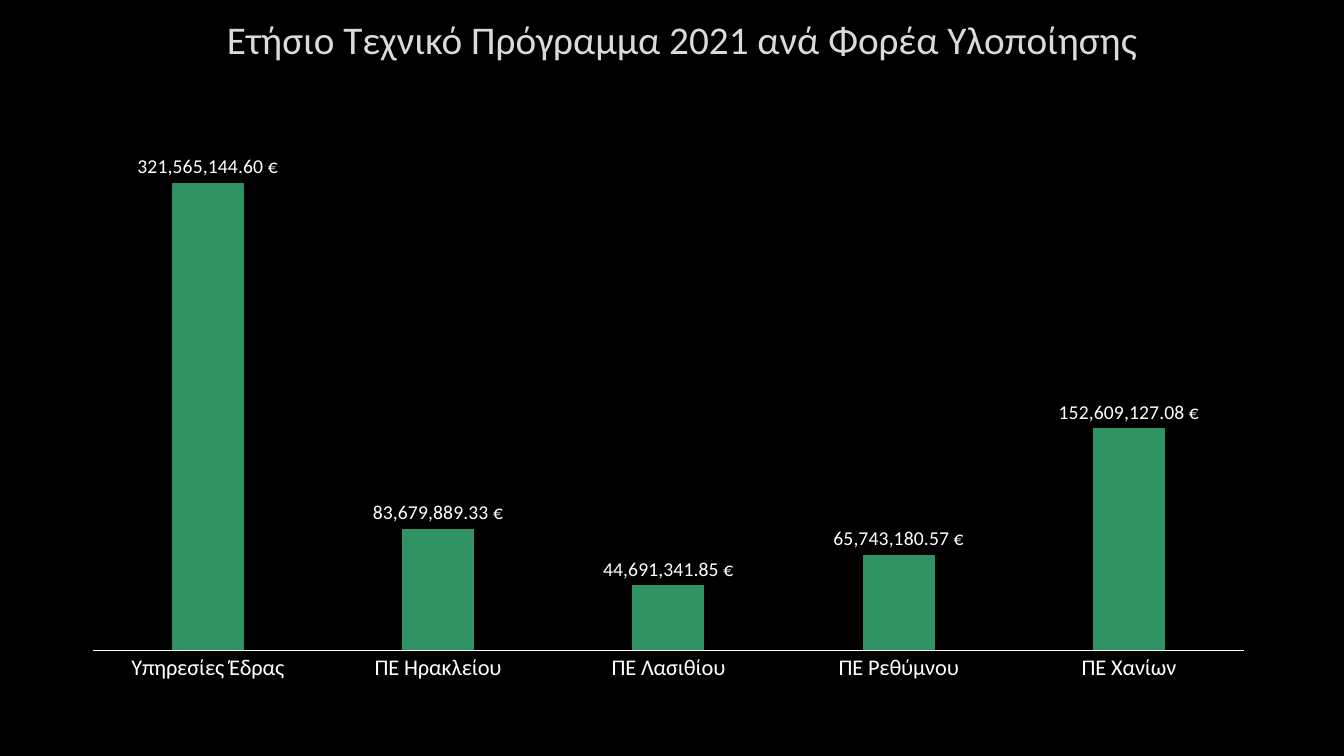
from dataclasses import dataclass

import lxml.etree
import pptx
import pptx.chart.data
import pptx.dml.color
import pptx.enum.chart
import pptx.enum.text
import pptx.oxml
import pptx.oxml.ns
import pptx.util
from pptx.util import Cm, Pt

BLACK = pptx.dml.color.RGBColor(0x00, 0x00, 0x00)
WHITE = pptx.dml.color.RGBColor(0xFF, 0xFF, 0xFF)
TITLE_GREY = pptx.dml.color.RGBColor(0xDA, 0xDA, 0xDA)
GREEN = pptx.dml.color.RGBColor(0x2E, 0x92, 0x62)
FONT_NAME = "Calibri"
EURO_FORMAT = r"#,##0.00\ [$€-408]"
TITLE = "Ετήσιο Τεχνικό Πρόγραμμα 2021 ανά Φορέα Υλοποίησης "


@dataclass(frozen=True)
class Budget:
    agency: str
    euros: float


BUDGETS = [
    Budget("Υπηρεσίες Έδρας", 321565144.60),
    Budget("ΠΕ Ηρακλείου", 83679889.33),
    Budget("ΠΕ Λασιθίου", 44691341.85),
    Budget("ΠΕ Ρεθύμνου", 65743180.57),
    Budget("ΠΕ Χανίων", 152609127.08),
]


def style_font(font, size: float, color: pptx.dml.color.RGBColor) -> None:
    font.name = FONT_NAME
    font.size = Pt(size)
    font.color.rgb = color


def add_title(slide) -> None:
    box = slide.shapes.add_textbox(Cm(2.92), Cm(0.25), Cm(28.75), Cm(1.8))
    frame = box.text_frame
    frame.word_wrap = True
    frame.vertical_anchor = pptx.enum.text.MSO_ANCHOR.TOP
    paragraph = frame.paragraphs[0]
    paragraph.alignment = pptx.enum.text.PP_ALIGN.CENTER
    run = paragraph.add_run()
    run.text = TITLE
    style_font(paragraph.font, 28, TITLE_GREY)
    style_font(run.font, 28, TITLE_GREY)
    # A faint glyph outline must precede the fill in the run properties.
    outline = pptx.oxml.parse_xml(
        f'<a:ln {pptx.oxml.ns.nsdecls("a")} w="9525"><a:solidFill>'
        '<a:srgbClr val="404040"><a:alpha val="10000"/></a:srgbClr>'
        '</a:solidFill><a:prstDash val="solid"/></a:ln>'
    )
    run.font._element.insert(0, outline)


def set_plot_layout(chart, x: float, y: float, w: float, h: float) -> None:
    """Place the inner plot area, in fractions of the chart."""
    plot_area = chart._chartSpace.chart.plotArea
    for old_layout in plot_area.findall(pptx.oxml.ns.qn("c:layout")):
        plot_area.remove(old_layout)
    layout = lxml.etree.Element(pptx.oxml.ns.qn("c:layout"))
    manual = lxml.etree.SubElement(layout, pptx.oxml.ns.qn("c:manualLayout"))
    settings = {"layoutTarget": "inner", "xMode": "edge", "yMode": "edge",
                "x": x, "y": y, "w": w, "h": h}
    for name, value in settings.items():
        child = lxml.etree.SubElement(manual, pptx.oxml.ns.qn(f"c:{name}"))
        child.set("val", str(value))
    plot_area.insert(0, layout)


def add_budget_chart(slide) -> None:
    data = pptx.chart.data.CategoryChartData(number_format=EURO_FORMAT)
    data.categories = [budget.agency for budget in BUDGETS]
    data.add_series("Series 1", [budget.euros for budget in BUDGETS])
    chart = slide.shapes.add_chart(
        pptx.enum.chart.XL_CHART_TYPE.COLUMN_CLUSTERED,
        Cm(1.73), Cm(3.28), Cm(30.23), Cm(14.25), data,
    ).chart
    chart.has_title = False
    chart.has_legend = False
    style_font(chart.font, 10, WHITE)
    set_plot_layout(chart, 0.02, 0.02, 0.96, 0.9)

    category_axis = chart.category_axis
    category_axis.major_tick_mark = pptx.enum.chart.XL_TICK_MARK.NONE
    category_axis.format.line.color.rgb = WHITE
    category_axis.format.line.width = Pt(0.75)
    style_font(category_axis.tick_labels.font, 16, WHITE)

    value_axis = chart.value_axis
    value_axis.visible = False
    value_axis.has_major_gridlines = False
    value_axis.minimum_scale = 0
    value_axis.maximum_scale = 350_000_000

    plot = chart.plots[0]
    plot.gap_width = 219
    plot.overlap = -27
    plot.vary_by_categories = False
    series = plot.series[0]
    series.format.fill.solid()
    series.format.fill.fore_color.rgb = GREEN
    labels = series.data_labels
    labels.show_value = True
    labels.number_format = EURO_FORMAT
    labels.number_format_is_linked = False
    labels.position = pptx.enum.chart.XL_LABEL_POSITION.OUTSIDE_END
    style_font(labels.font, 14, WHITE)


def main() -> None:
    presentation = pptx.Presentation()
    presentation.slide_width = Cm(33.87)
    presentation.slide_height = Cm(19.05)
    slide = presentation.slides.add_slide(presentation.slide_layouts[6])
    slide.background.fill.solid()
    slide.background.fill.fore_color.rgb = BLACK
    add_title(slide)
    add_budget_chart(slide)
    presentation.save("out.pptx")


if __name__ == "__main__":
    main()
